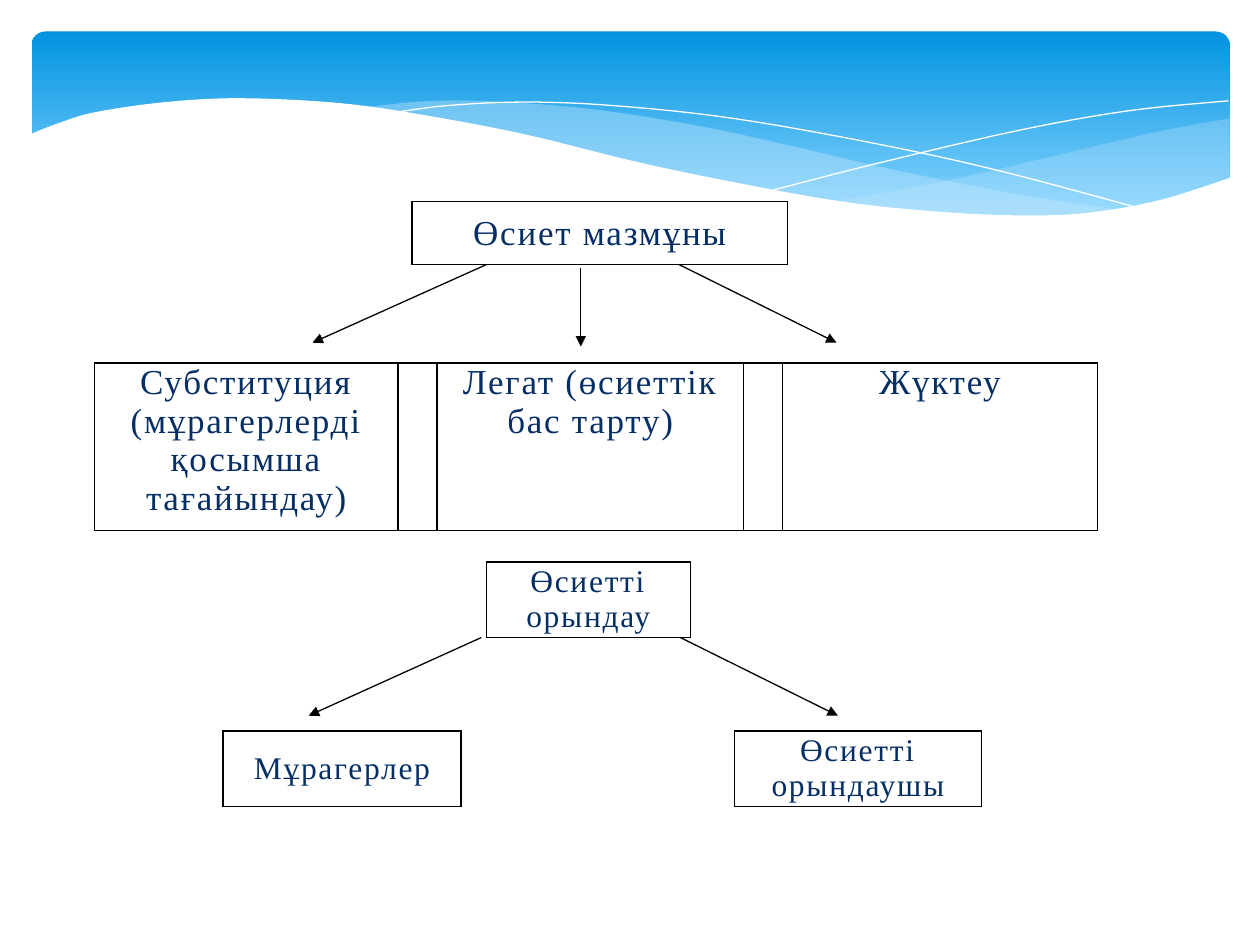
"""Build a slide showing the contents and the execution of a will."""
import dataclasses

import pptx
import pptx.dml.color
import pptx.enum.shapes
import pptx.enum.text
import pptx.oxml
import pptx.oxml.ns
import pptx.util

COLUMNS, ROWS = 100, 75


@dataclasses.dataclass(frozen=True)
class Theme:
    sky_top: str = "0293E0"
    sky_bottom: str = "83D3FE"
    mist: str = "C6E7FC"
    white: str = "FFFFFF"
    ink: str = "000000"
    text: str = "052E65"
    font: str = "Times New Roman"
    large: float = 20
    medium: float = 18
    tracking: float = 1
    border: float = 1
    arrow: float = 0.75


def color(value):
    return pptx.dml.color.RGBColor.from_string(value)


def apply(target, values):
    for name, value in values.items():
        setattr(target, name, value)


def add_xml(parent, tag, inner="", attributes=""):
    namespace = pptx.oxml.ns.nsdecls("a")
    parent.append(pptx.oxml.parse_xml(f"<a:{tag} {namespace} {attributes}>{inner}</a:{tag}>"))


def smooth(knots, steps=6):
    """Return points on a Catmull-Rom curve through the knots."""
    padded = [knots[0], *knots, knots[-1]]
    points = [knots[0]]
    for a, b, c, d in zip(padded, padded[1:], padded[2:], padded[3:]):
        for step in range(1, steps + 1):
            t = step / steps
            points.append(tuple(
                (2 * q + (r - p) * t + (2 * p - 5 * q + 4 * r - s) * t ** 2
                 + (3 * q - p - 3 * r + s) * t ** 3) / 2
                for p, q, r, s in zip(a, b, c, d)))
    return points


class SlideBuilder:
    def __init__(self, deck, theme):
        self.theme = theme
        self.slide = deck.slides.add_slide(deck.slide_layouts[6])
        self.column = deck.slide_width / COLUMNS
        self.row = deck.slide_height / ROWS

    def place(self, *lengths):
        units = (self.column, self.row) * 2
        return [round(length * unit) for length, unit in zip(lengths, units)]

    def banner(self, left, top, width, height):
        box = self.slide.shapes.add_shape(
            pptx.enum.shapes.MSO_SHAPE.ROUNDED_RECTANGLE, *self.place(left, top, width, height))
        box.adjustments[0] = 0.071
        box.shadow.inherit = False
        box.line.fill.background()
        box.fill.gradient()
        box.fill.gradient_angle = 270
        stops = ((0, self.theme.sky_top), (0.9, self.theme.sky_bottom))
        for stop, (position, shade) in zip(box.fill.gradient_stops, stops):
            stop.position = position
            stop.color.rgb = color(shade)

    def outline(self, points, close):
        points = [self.place(*point) for point in points]
        builder = self.slide.shapes.build_freeform(*points[0])
        builder.add_line_segments(points[1:], close=close)
        shape = builder.convert_to_shape()
        shape.shadow.inherit = False
        return shape

    def wave(self, *edges, fill, opacity=100):
        shape = self.outline([point for edge in edges for point in smooth(edge)], True)
        shape.line.fill.background()
        shape.fill.solid()
        shape.fill.fore_color.rgb = color(fill)
        if opacity < 100:
            shade = shape._element.spPr.find(".//" + pptx.oxml.ns.qn("a:srgbClr"))
            add_xml(shade, "alpha", attributes=f'val="{opacity * 1000}"')

    def ripple(self, *knots):
        shape = self.outline(smooth(knots), False)
        shape.fill.background()
        shape.line.color.rgb = color(self.theme.white)
        shape.line.width = 0

    def border(self, cell, sides):
        line = f'<a:solidFill><a:srgbClr val="{self.theme.ink}"/></a:solidFill>'
        width = pptx.util.Pt(self.theme.border)
        for side in "LRTB":
            inner = line if side in sides else "<a:noFill/>"
            add_xml(cell._tc.get_or_add_tcPr(), f"ln{side}", inner, f'w="{width}"')

    def label(self, cell, text, size, anchor):
        margin = pptx.util.Inches(0.07)
        apply(cell, {"margin_left": margin, "margin_right": margin, "margin_top": 0,
                     "margin_bottom": 0, "vertical_anchor": anchor})
        para = cell.text_frame.paragraphs[0]
        para.alignment = pptx.enum.text.PP_ALIGN.CENTER
        span = para.add_run()
        span.text = text
        apply(span.font, {"name": self.theme.font, "size": pptx.util.Pt(size), "bold": False})
        span.font.color.rgb = color(self.theme.text)
        span._r.get_or_add_rPr().set("spc", str(round(self.theme.tracking * 100)))

    def boxes(self, left, top, height, widths, texts, size,
              anchor=pptx.enum.text.MSO_ANCHOR.MIDDLE, gap_sides="LRTB"):
        table = self.slide.shapes.add_table(
            1, len(widths), *self.place(left, top, sum(widths), height)).table
        apply(table, {"first_row": False, "horz_banding": False})
        for column, width, cell, text in zip(table.columns, widths, table.rows[0].cells, texts):
            column.width = round(width * self.column)
            self.border(cell, "LRTB" if text else gap_sides)
            cell.fill.background()
            if text:
                self.label(cell, text, size, anchor)

    def arrow(self, start, end):
        line = self.slide.shapes.add_connector(
            pptx.enum.shapes.MSO_CONNECTOR.STRAIGHT, *self.place(*start, *end))
        line.line.color.rgb = color(self.theme.ink)
        line.line.width = pptx.util.Pt(self.theme.arrow)
        add_xml(line.line._get_or_add_ln(), "tailEnd", attributes='type="triangle"')
        add_xml(line._element.spPr, "effectLst")


def main():
    deck = pptx.Presentation()
    apply(deck, {"slide_width": pptx.util.Inches(10), "slide_height": pptx.util.Inches(7.5)})
    theme = Theme()
    page = SlideBuilder(deck, theme)

    page.banner(2.5, 2.5, 95.1, 15.6)
    page.wave([(97.6, 9.4), (92.1, 10.4), (86.1, 11.8), (75.3, 14.3), (66.1, 16)],
              [(66.1, 16), (73.2, 16.8), (80.3, 17.2), (87.2, 16.9), (92.8, 15.8), (97.6, 14.1)],
              fill=theme.mist, opacity=29)
    page.wave([(89.3, 16.7), (80.7, 15.4), (70.6, 13.4), (62.9, 11.6), (55.5, 10),
               (46.5, 8.6), (38, 8), (32.8, 8.1), (28.6, 8.6)],
              [(28.6, 8.6), (36.2, 9.7), (44.9, 11.6), (56.6, 14.3), (66.5, 16.1),
               (74.8, 17), (81.8, 17.3), (89.3, 16.7)],
              fill=theme.mist, opacity=40)
    page.ripple((30.9, 9), (35.3, 8.4), (41.6, 8.1), (48.9, 8.4), (58.2, 9.4),
                (69.5, 11.4), (79.5, 13.6), (90.7, 16.6))
    page.ripple((61.3, 15.1), (69.5, 13), (80.6, 10.4), (89.5, 8.8), (97.5, 8))
    page.wave([(97.7, 14.1), (92, 15.9), (86.3, 16.9), (80.9, 17.1), (74.4, 16.8),
               (66.8, 16), (57.9, 14.4), (50.3, 12.8), (41.8, 10.7), (34, 9.2),
               (27.1, 8.2), (19.3, 7.8), (13.2, 8.1), (7.6, 8.9), (4.6, 9.8), (2.3, 10.7)],
              [(2.3, 22.4)], [(97.7, 22.4)], fill=theme.white)

    page.boxes(32.7, 16, 5, [29.8], ["Өсиет мазмұны"], theme.large)
    page.boxes(7.5, 28.8, 13.3, [24.1, 3.1, 24.3, 3.1, 25],
               ["Субституция (мұрагерлерді қосымша тағайындау)", "",
                "Легат (өсиеттік бас тарту)", "", "Жүктеу"],
               theme.large, pptx.enum.text.MSO_ANCHOR.TOP)
    page.boxes(38.6, 44.6, 6, [16.2], ["Өсиетті орындау"], theme.medium)
    page.boxes(17.7, 58, 6, [18.9, 21.7, 19.6],
               ["Мұрагерлер", "", "Өсиетті орындаушы"], theme.medium, gap_sides="LR")

    for top, ends in ((21, ((38.6, 24.8), (53.9, 66.4))),
                      (50.6, ((38.2, 24.5), (54, 66.5)))):
        for start, end in ends:
            page.arrow((start, top), (end, top + 6.2))
    page.arrow((46.1, 21.3), (46.1, 27.5))

    deck.save("out.pptx")


if __name__ == "__main__":
    main()
